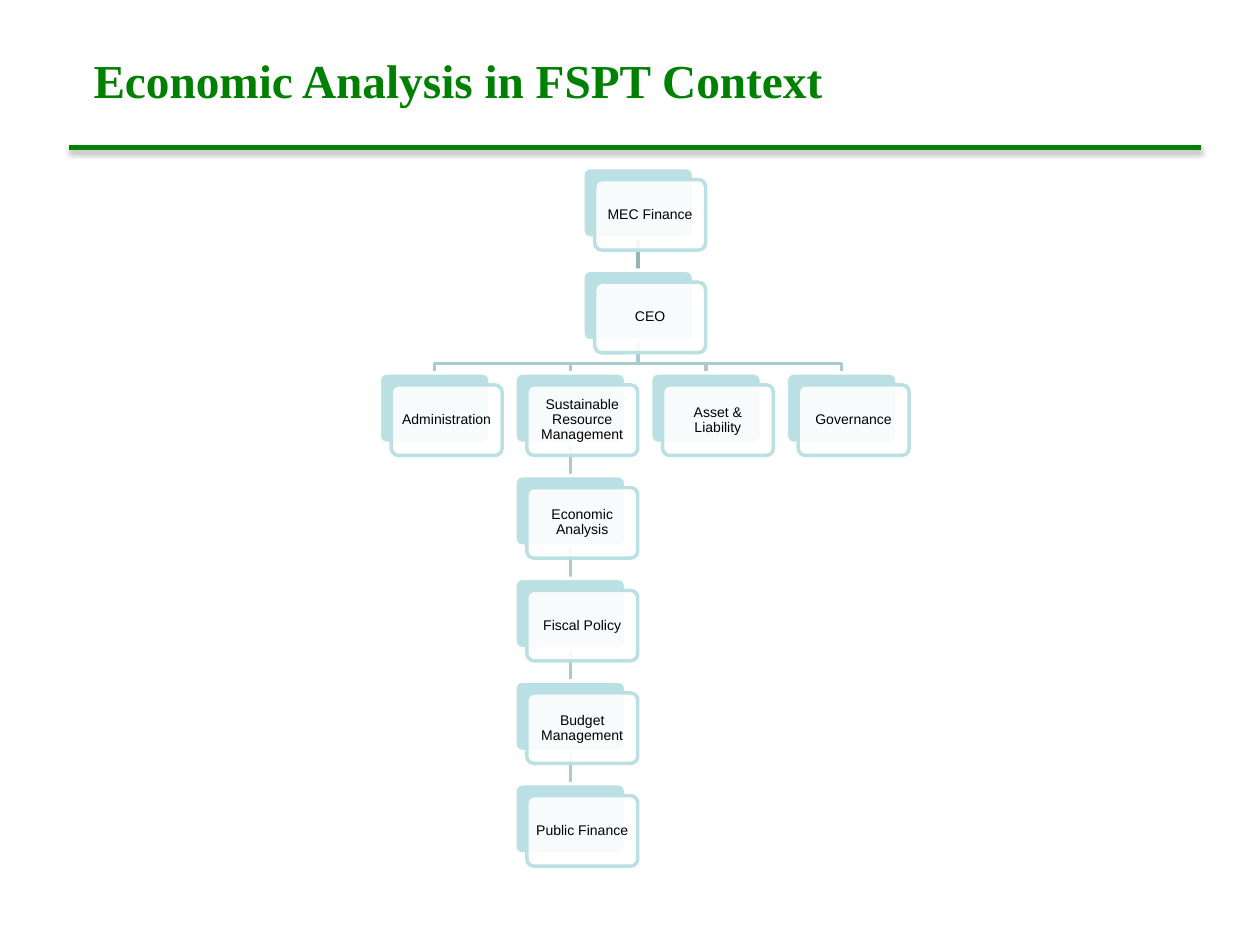
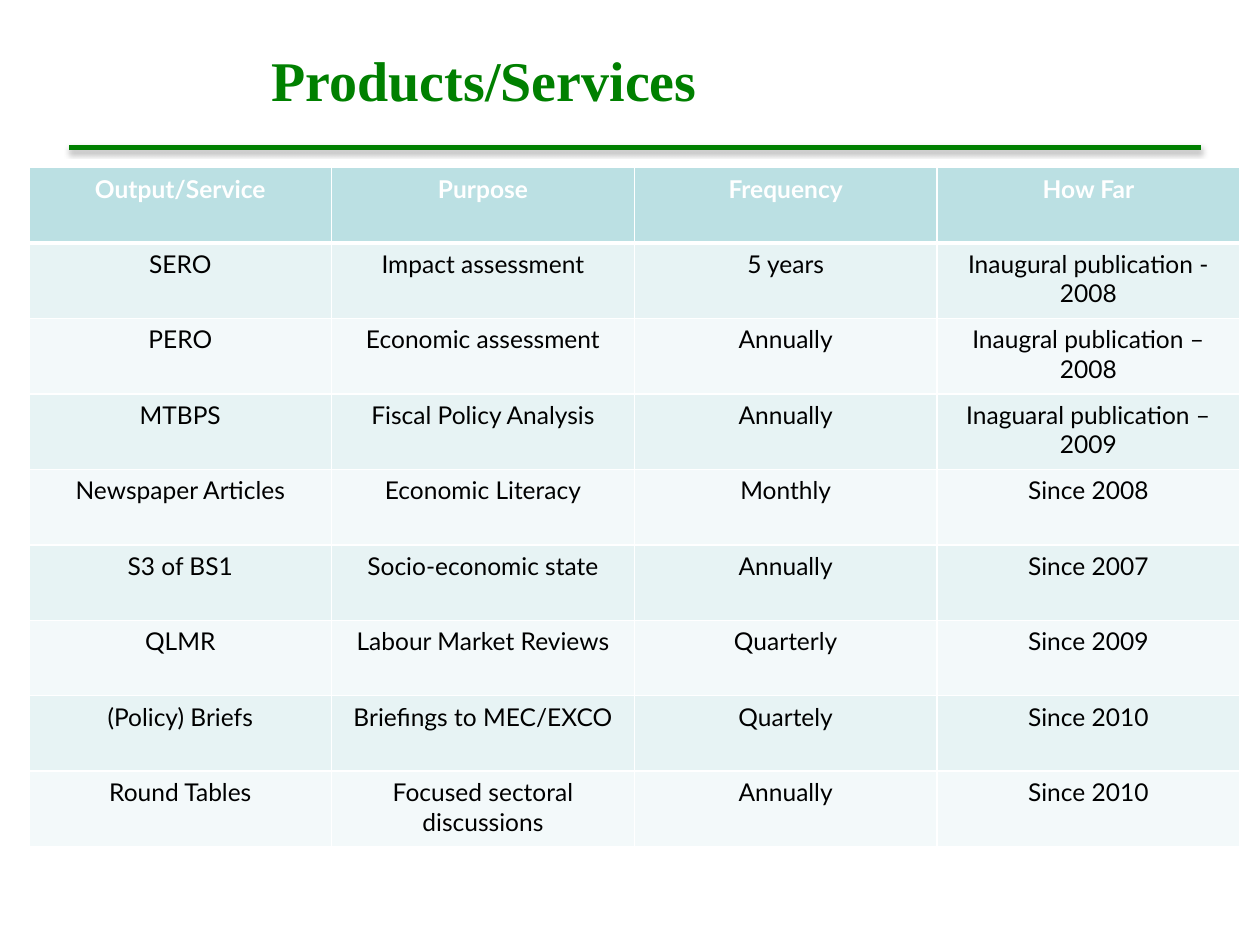
from dataclasses import dataclass

from lxml import etree
from pptx import Presentation
from pptx.dml.color import RGBColor
from pptx.enum.shapes import MSO_CONNECTOR as Link, MSO_SHAPE as Shape
from pptx.enum.text import MSO_ANCHOR as Anchor, PP_ALIGN as Align
from pptx.oxml import parse_xml
from pptx.oxml.ns import nsdecls, qn
from pptx.util import Inches, Pt


@dataclass(frozen=True)
class Theme:
    green: str = "008000"
    aqua: str = "BBE0E3"
    stem: str = "96B3B6"
    branch: str = "AACBCE"
    white: str = "FFFFFF"
    black: str = "000000"
    bands: tuple = ("E7F3F4", "F3F9FA")
    serif: str = "Times New Roman"
    sans: str = "Arial"
    grid: str = "Lato"
    card: int = 8
    cell: int = 14


T = Theme()

CHART_TITLE = ("Economic Analysis in FSPT Context", 27, (0, 0.16, 7.27, 0.94))
TABLE_TITLE = ("Products/Services", 32, (0.5, 0.16, 6.69, 0.94))
RULE = (0.55, 1.17, 9.53, 1.17)

UNITS = [
    ("MEC Finance", 1.5, 0, None),
    ("CEO", 1.5, 1, "MEC Finance"),
    ("Administration", 0, 2, "CEO"),
    ("Sustainable Resource Management", 1, 2, "CEO"),
    ("Economic Analysis", 1, 3, "Sustainable Resource Management"),
    ("Fiscal Policy", 1, 4, "Economic Analysis"),
    ("Budget Management", 1, 5, "Fiscal Policy"),
    ("Public Finance", 1, 6, "Budget Management"),
    ("Asset & Liability", 2, 2, "CEO"),
    ("Governance", 3, 2, "CEO"),
]
LEFT, RIGHT, TOP, LOW = 3.01, 6.24, 1.33, 6.22
STEP_X, STEP_Y = (RIGHT - LEFT) / 3, (LOW - TOP) / 6
WIDE, HIGH, SHIFT, BEND = 0.88, 0.56, 0.095, 0.18

ROWS = [
    ("Output/Service", "Purpose", "Frequency", "How Far"),
    ("SERO", "Impact assessment", "5 years", "Inaugural publication - 2008"),
    ("PERO", "Economic assessment", "Annually", "Inaugral publication – 2008"),
    ("MTBPS", "Fiscal Policy Analysis", "Annually", "Inaguaral publication – 2009"),
    ("Newspaper Articles", "Economic Literacy", "Monthly", "Since 2008"),
    ("S3 of BS1", "Socio-economic state", "Annually", "Since 2007"),
    ("QLMR", "Labour Market Reviews", "Quarterly", "Since 2009"),
    ("(Policy) Briefs", "Briefings to MEC/EXCO", "Quartely", "Since 2010"),
    ("Round Tables", "Focused sectoral discussions", "Annually", "Since 2010"),
]
TABLE_BOX = (0.23, 1.33, 9.61, 5.39)


def rgb(code):
    return RGBColor.from_string(code)


def write(frame, text, size, font, color=T.black, bold=False, space=None):
    frame.word_wrap = True
    para = frame.paragraphs[0]
    para.text = text
    para.alignment = Align.CENTER
    para.line_spacing = space
    face = para.runs[0].font
    face.name, face.size, face.bold = font, Pt(size), bold
    face.color.rgb = rgb(color)


def stroke(shape, color, width):
    shape.line.color.rgb = rgb(color)
    shape.line.width = Pt(width)


def line(slide, ends, color, width):
    link = slide.shapes.add_connector(Link.STRAIGHT, *map(Inches, ends))
    stroke(link, color, width)
    etree.SubElement(link.element.spPr, qn("a:effectLst"))
    return link


def add_rule(layout, slide):
    rule = line(slide, RULE, T.green, 3)
    glow = rule.element.spPr.find(qn("a:effectLst"))
    glow.append(parse_xml(
        f'<a:outerShdw {nsdecls("a")} blurRad="{Pt(3.1)}" dist="{Pt(1.8)}" dir="5400000" '
        f'rotWithShape="0"><a:srgbClr val="{T.black}"><a:alpha val="35000"/>'
        '</a:srgbClr></a:outerShdw>'))
    layout.element.cSld.spTree.append(rule.element)


def add_title(slide, text, size, box):
    title = slide.shapes.title
    title.left, title.top, title.width, title.height = map(Inches, box)
    title.text_frame.vertical_anchor = Anchor.MIDDLE
    write(title.text_frame, text, size, T.serif, color=T.green, bold=True)


def add_card(slide, x, y, fill, edge, alpha=None):
    card = slide.shapes.add_shape(Shape.ROUNDED_RECTANGLE, *map(Inches, (x, y, WIDE, HIGH)))
    card.adjustments[0] = 0.1
    card.shadow.inherit = False
    card.fill.solid()
    card.fill.fore_color.rgb = rgb(fill)
    if alpha:
        tone = card.element.spPr.find(qn("a:solidFill"))[0]
        etree.SubElement(tone, qn("a:alpha"), val=str(alpha * 1000))
    stroke(card, edge, 2)
    return card


def add_unit(slide, name, col, row):
    x, y = LEFT + col * STEP_X, TOP + row * STEP_Y
    back = add_card(slide, x, y, T.aqua, T.white)
    front = add_card(slide, x + SHIFT, y + SHIFT, T.white, T.aqua, alpha=90)
    frame = front.text_frame
    frame.margin_left = frame.margin_right = Inches(0.03)
    frame.margin_top = frame.margin_bottom = Inches(0.03)
    frame.vertical_anchor = Anchor.MIDDLE
    write(frame, name, T.card, T.sans, space=0.9)
    return back


def join(slide, boss, unit, color):
    x1, y1 = boss.left + boss.width // 2, boss.top + boss.height
    x2, y2 = unit.left + unit.width // 2, unit.top
    if x1 == x2:
        link = line(slide, (0, 0, 0, 0), color, 2)
        link.begin_connect(boss, 2)
        link.end_connect(unit, 0)
    else:
        bend = y1 + Inches(BEND)
        pen = slide.shapes.build_freeform(x1, y1)
        pen.add_line_segments([(x1, bend), (x2, bend), (x2, y2)], close=False)
        link = pen.convert_to_shape()
        link.fill.background()
        link.shadow.inherit = False
        stroke(link, color, 2)
    slide.element.cSld.spTree.insert(2, link.element)


def add_chart(slide):
    cards = {name: add_unit(slide, name, col, row) for name, col, row, _ in UNITS}
    for name, _, row, boss in UNITS:
        if boss:
            join(slide, cards[boss], cards[name], T.stem if row == 1 else T.branch)


def edge(cell, sides):
    props = cell._tc.get_or_add_tcPr()
    for spot, (side, width) in enumerate(sides.items()):
        props.insert(spot, parse_xml(
            f'<a:ln{side} {nsdecls("a")} w="{Pt(width)}"><a:solidFill>'
            f'<a:srgbClr val="{T.white}"/></a:solidFill></a:ln{side}>'))


def add_grid(slide):
    shape = slide.shapes.add_table(len(ROWS), len(ROWS[0]), *map(Inches, TABLE_BOX))
    table = shape.table
    table.horz_banding = False
    for r, row in enumerate(ROWS):
        head = r == 0
        for c, text in enumerate(row):
            cell = table.cell(r, c)
            cell.fill.solid()
            cell.fill.fore_color.rgb = rgb(T.aqua if head else T.bands[(r - 1) % 2])
            edge(cell, {"L": 1, "R": 1, "T": 3 if r == 1 else 1, "B": 3 if head else 1})
            write(cell.text_frame, text, T.cell, T.grid,
                  color=T.white if head else T.black, bold=head)


def main():
    deck = Presentation()
    deck.slide_width, deck.slide_height = Inches(10), Inches(7.5)
    layout = deck.slide_layouts[5]
    pages = [(CHART_TITLE, add_chart), (TABLE_TITLE, add_grid)]
    for title, fill in pages:
        slide = deck.slides.add_slide(layout)
        add_title(slide, *title)
        fill(slide)
    add_rule(layout, slide)
    deck.save("out.pptx")


if __name__ == "__main__":
    main()
